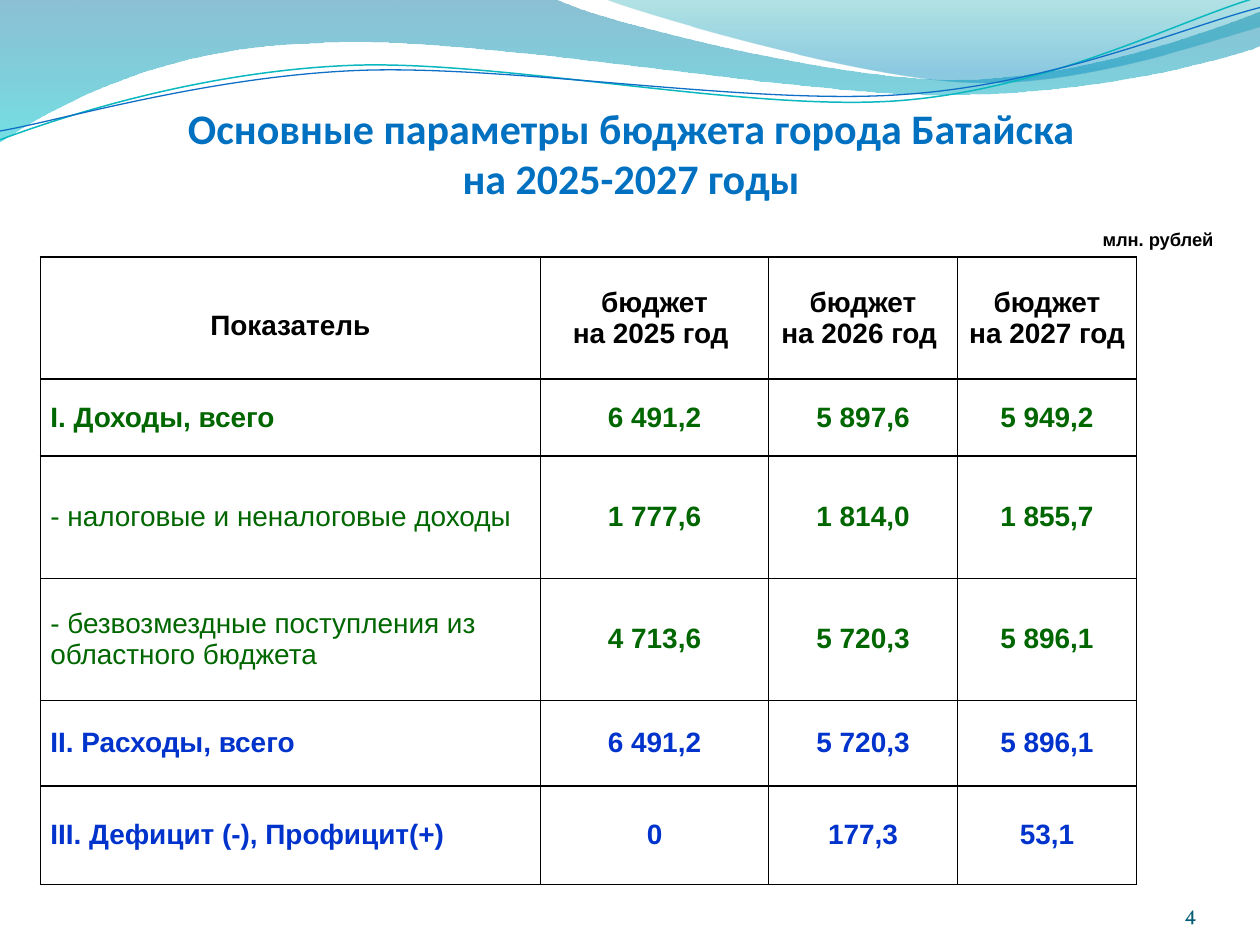
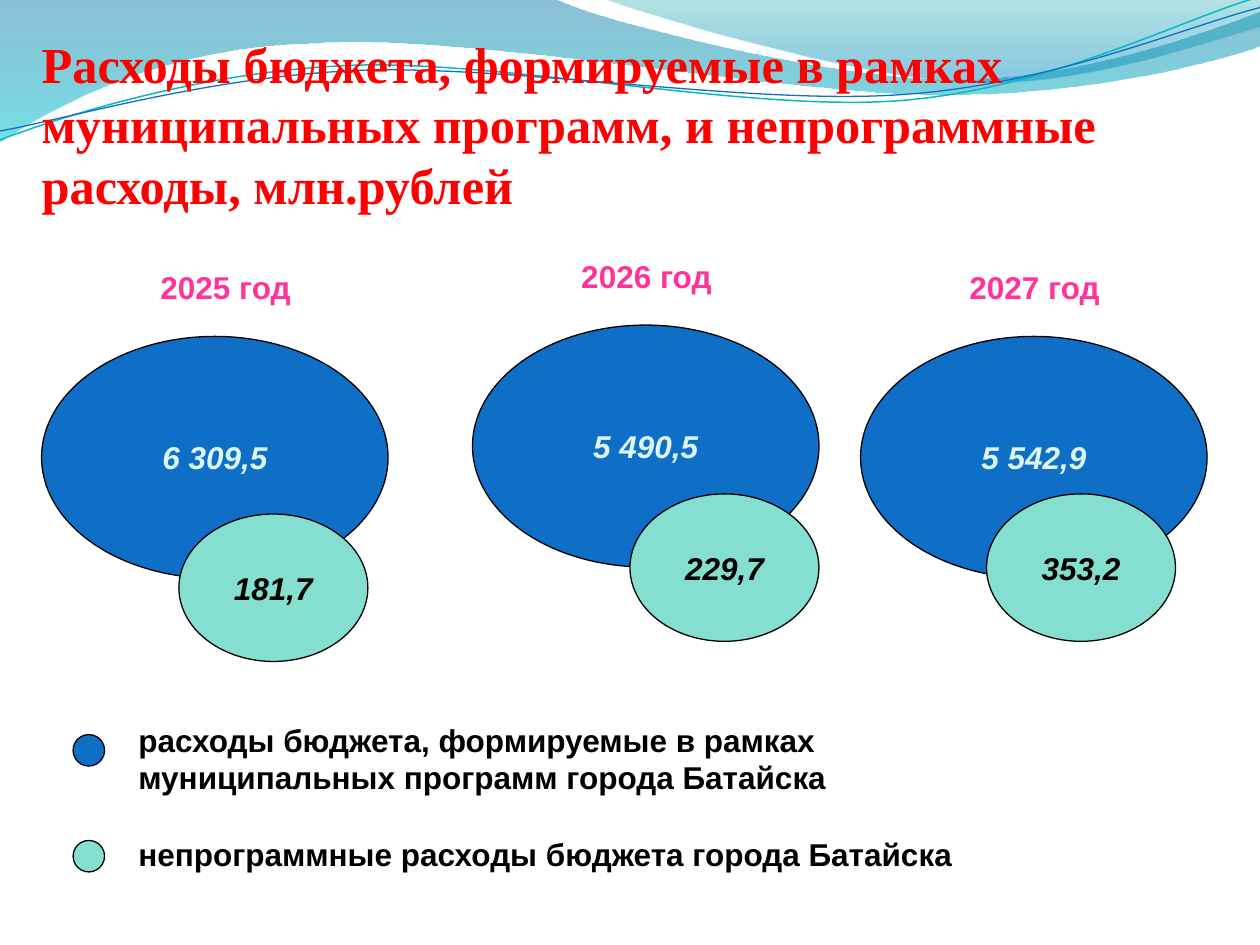
from lxml import etree
from pptx import Presentation
from pptx.dml.color import RGBColor
from pptx.enum.shapes import MSO_SHAPE
from pptx.enum.text import MSO_ANCHOR, MSO_AUTO_SIZE, PP_ALIGN
from pptx.oxml import parse_xml
from pptx.oxml.ns import nsdecls, qn
from pptx.util import Inches, Pt

LEFT, CENTER, RIGHT = PP_ALIGN.LEFT, PP_ALIGN.CENTER, PP_ALIGN.RIGHT
TOP, MIDDLE, BOTTOM = MSO_ANCHOR.TOP, MSO_ANCHOR.MIDDLE, MSO_ANCHOR.BOTTOM
OVAL, FIXED = MSO_SHAPE.OVAL, MSO_AUTO_SIZE.NONE

# Shared colours
BLACK, BLUE, MINT, PALE = "000000", "0F6FC6", "85DFD0", "DBF5F9"
GREEN, NAVY, PINK = "006600", "0033CC", "FF3399"

# Wave outlines: start point, then 2 numbers for a line or 6 for a curve
BANDS = [
    ([(0, 0), (4.4, -0.01), (4.76, 0.17, 6.64, 0.63, 7.58, 0.63),
      (8.53, 0.63, 9.58, 0.26, 10, 0.09), (10.01, 0.36),
      (9.83, 0.44, 8.7, 0.76, 7.46, 0.75),
      (6.22, 0.75, 3.82, 0.28, 2.57, 0.34),
      (1.29, 0.36, 0.46, 0.83, -0.01, 1.13), (0, 0)],
     [(0, "0074A1", 45), (100, "00C6CF", 55)]),
    ([(4.79, -0.01), (5.09, 0.11, 6.82, 0.62, 7.69, 0.65),
      (8.56, 0.69, 9.61, 0.32, 10, 0.21), (10, 0), (4.79, -0.01)],
     [(0, "00A1A9", 30), (80, "008BBF", 45)]),
]
CURVES = [
    ([(0, 1.11), (0.48, 0.93, 1.58, 0.57, 2.77, 0.52),
      (3.95, 0.47, 5.93, 0.89, 7.13, 0.8),
      (8.33, 0.71, 9.38, 0.15, 9.98, -0.02)], "0AB8BF", 0.85),
    ([(0, 1.04), (0.47, 0.96, 1.64, 0.61, 2.83, 0.56),
      (4.03, 0.51, 5.97, 0.84, 7.17, 0.75),
      (8.36, 0.67, 9.41, 0.21, 10, 0.06)], BLUE, 0.75),
]

COLS = [3.97, 1.81, 1.5, 1.42]
ROWS = [0.97, 0.61, 0.97, 0.97, 0.68, 0.78]
HEAD = ["Показатель"] + [f"бюджет\nна {year} год " for year in (2025, 2026, 2027)]
# Row texts, colour, bold label
BODY = [
    (["I. Доходы, всего", "6 491,2", "5 897,6", "5 949,2"], GREEN, True),
    (["- налоговые и неналоговые доходы", "1 777,6", "1 814,0", "1 855,7"],
     GREEN, False),
    (["- безвозмездные поступления из областного бюджета",
      "4 713,6", "5 720,3", "5 896,1"], GREEN, False),
    (["II. Расходы, всего", "6 491,2", "5 720,3", "5 896,1"], NAVY, True),
    (["III. Дефицит (-), Профицит(+)", "0", "177,3", "53,1"], NAVY, True),
]

# Place, year, both values, offset of the year and of the small oval
YEARS = [
    (0.33, 2.67, "2025 год", "6 309,5", "181,7", 0.75, (1.09, 1.41)),
    (3.75, 2.58, "2026 год", "5 490,5", "229,7", 0.67, (1.25, 1.34)),
    (6.83, 2.67, "2027 год", "5 542,9", "353,2", 0.67, (1, 1.25)),
]
KEYS = [
    (5.83, 5.67, 0.71, BLUE, "расходы бюджета, формируемые в рамках\n"
                             "муниципальных программ города Батайска"),
    (6.67, 6.58, 0.4, MINT, "непрограммные расходы бюджета города Батайска"),
]


def rgb(code):
    return RGBColor.from_string(code)


def box(*sizes):
    return [Inches(size) for size in sizes]


def write(frame, text, size=18, font="Arial", color=BLACK, bold=True,
          slant=False, align=LEFT, anchor=TOP, wrap=True, inset=None, space=None):
    """Fill a text frame, one paragraph per line."""
    frame.word_wrap, frame.vertical_anchor = wrap, anchor
    if inset:
        (frame.margin_left, frame.margin_top,
         frame.margin_right, frame.margin_bottom) = box(*inset)
    frame.text = text
    for para in frame.paragraphs:
        para.alignment = align
        if space:
            para.line_spacing = space
        for run in para.runs:
            face = run.font
            face.name, face.size = font, Pt(size)
            face.bold, face.italic = bold, slant
            face.color.rgb = rgb(color)


def label(slide, place, text, **style):
    write(slide.shapes.add_textbox(*box(*place)).text_frame, text, **style)


def head(slide, place, text, **style):
    title = slide.shapes.title
    title.left, title.top, title.width, title.height = box(*place)
    frame = title.text_frame
    frame.auto_size = FIXED
    write(frame, text, anchor=BOTTOM, inset=(0, 0.05, 0, 0), **style)


def oval(slide, place, fill, text="", color=BLACK):
    shape = slide.shapes.add_shape(OVAL, *box(*place))
    shape.shadow.inherit = False
    shape.fill.solid()
    shape.fill.fore_color.rgb = rgb(fill)
    shape.line.color.rgb = rgb(BLACK)
    shape.line.width = Pt(0.75)
    if text:
        write(shape.text_frame, text, color=color, slant=True,
              align=CENTER, anchor=MIDDLE, wrap=False)


# Wave band at the top, shared through the layout
def bend(shape, parts):
    """Join each three line steps of a curve into one cubic step."""
    steps = iter(list(shape.element.iter(qn("a:lnTo"))))
    for part in parts[1:]:
        step = next(steps)
        if len(part) == 6:
            step.tag = qn("a:cubicBezTo")
            for _ in range(2):
                extra = next(steps)
                step.append(extra[0])
                extra.getparent().remove(extra)


def outline(slide, parts, close):
    dots = [(Inches(part[i]), Inches(part[i + 1]))
            for part in parts for i in range(0, len(part), 2)]
    pen = slide.shapes.build_freeform(*dots[0])
    pen.add_line_segments(dots[1:], close=close)
    shape = pen.convert_to_shape()
    bend(shape, parts)
    shape.shadow.inherit = False
    shape.fill.background()
    return shape


def fade(shape, stops):
    """Swap the empty fill for a see-through vertical gradient."""
    marks = "".join(
        f'<a:gs pos="{pos * 1000}"><a:srgbClr val="{code}">'
        f'<a:alpha val="{alpha * 1000}"/></a:srgbClr></a:gs>'
        for pos, code, alpha in stops)
    blank = shape.element.spPr.find(qn("a:noFill"))
    blank.getparent().replace(blank, parse_xml(
        f'<a:gradFill {nsdecls("a")}><a:gsLst>{marks}</a:gsLst>'
        '<a:lin ang="5400000" scaled="0"/></a:gradFill>'))


def waves(slide):
    made = []
    for parts, stops in BANDS:
        shape = outline(slide, parts, True)
        fade(shape, stops)
        shape.line.fill.background()
        made.append(shape)
    for parts, color, width in CURVES:
        shape = outline(slide, parts, False)
        shape.line.color.rgb = rgb(color)
        shape.line.width = Pt(width)
        made.append(shape)
    for shape in made:
        slide.slide_layout.shapes.element.append(shape.element)


# Budget table
def frame_cell(cell):
    cell.fill.background()
    props = cell._tc.get_or_add_tcPr()
    for spot, side in enumerate(("lnL", "lnR", "lnT", "lnB")):
        edge = etree.Element(qn(f"a:{side}"), w=str(Pt(1)))
        fill = etree.SubElement(edge, qn("a:solidFill"))
        etree.SubElement(fill, qn("a:srgbClr"), val=BLACK)
        props.insert(spot, edge)


def fill_cell(cell, text, **style):
    cell.margin_left = cell.margin_right = Inches(0.08)
    cell.margin_top = cell.margin_bottom = 0
    cell.vertical_anchor = MIDDLE
    write(cell.text_frame, text, size=16, anchor=None, wrap=None, **style)
    frame_cell(cell)


def grid(slide, left, top):
    place = box(left, top, sum(COLS), sum(ROWS))
    table = slide.shapes.add_table(len(ROWS), len(COLS), *place).table
    table.first_row = table.horz_banding = False
    for col, width in zip(table.columns, COLS):
        col.width = Inches(width)
    for row, height in zip(table.rows, ROWS):
        row.height = Inches(height)
    for col, text in enumerate(HEAD):
        fill_cell(table.cell(0, col), text, align=CENTER,
                  space=None if col else 1.5)
    for row, (texts, color, bold) in enumerate(BODY, 1):
        for col, text in enumerate(texts):
            fill_cell(table.cell(row, col), text, color=color,
                      bold=bold or col > 0, align=CENTER if col else LEFT)


def budget(slide):
    head(slide, (0.51, 0.74, 9, 0.87),
         "Основные параметры бюджета города Батайска\nна 2025-2027 годы",
         size=24, font="Calibri", color="0070C0", align=CENTER)
    grid(slide, 0.32, 2.04)
    label(slide, (8.31, 1.76, 1.42, 0.28), "млн. рублей", size=10.5, align=RIGHT)
    label(slide, (8.67, 6.95, 0.83, 0.4), "4", size=12, font="Vollkorn",
          color="045D75", bold=False, align=RIGHT, anchor=BOTTOM,
          inset=(0, 0, 0, 0))


# Spending ovals
def pair(slide, left, top, year, main, rest, shift, small):
    oval(slide, (left, top, 2.75, 1.92), BLUE, main, PALE)
    oval(slide, (left + small[0], top + small[1], 1.5, 1.17), MINT, rest)
    label(slide, (left + shift, top - 0.59, 1.42, 0.4), year,
          color=PINK, align=CENTER)


def legend(slide, left):
    for top, line, height, color, text in KEYS:
        oval(slide, (left, top, 0.25, 0.25), color)
        label(slide, (left + 0.42, line, 8.5, height), text)


def spending(slide):
    head(slide, (0.33, 0.25, 9, 1.45),
         "Расходы бюджета, формируемые в рамках муниципальных программ, "
         "и непрограммные расходы, млн.рублей",
         size=28.8, font="Times New Roman", color="FF0000")
    for item in YEARS:
        pair(slide, *item)
    legend(slide, 0.58)


def main():
    deck = Presentation()
    deck.slide_width, deck.slide_height = box(10, 7.5)
    plain = deck.slide_layouts[5]
    first, second = (deck.slides.add_slide(plain) for _ in range(2))
    waves(first)
    budget(first)
    spending(second)
    deck.save("out.pptx")


if __name__ == "__main__":
    main()
